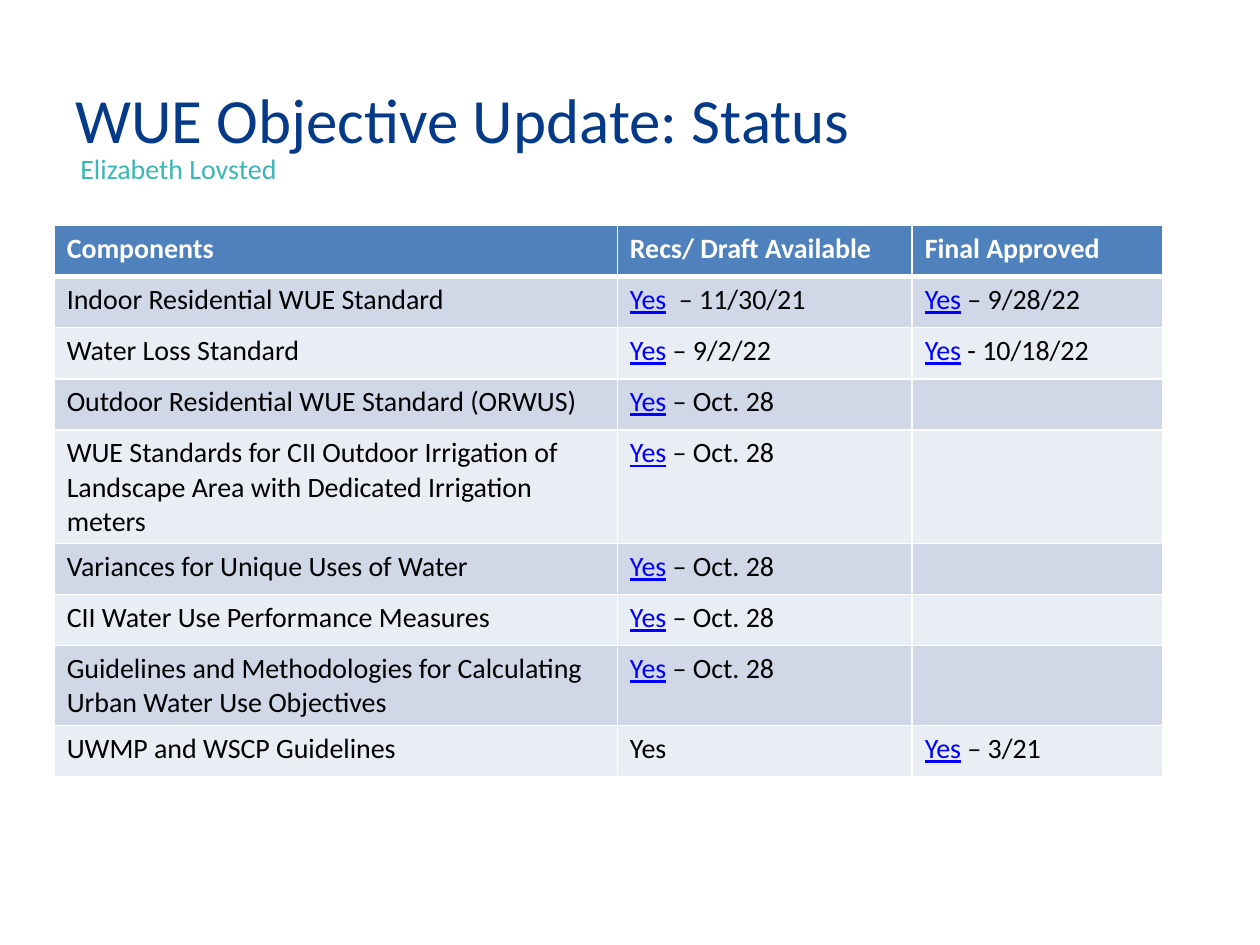
from dataclasses import dataclass

from lxml.etree import SubElement
from pptx import Presentation
from pptx.dml.color import RGBColor
from pptx.enum.text import MSO_VERTICAL_ANCHOR as Anchor
from pptx.oxml.ns import qn
from pptx.util import Inches, Pt


@dataclass(frozen=True)
class Theme:
    font: str = "Calibri"
    title_size: int = 36
    body_size: int = 16
    title: str = "053A88"
    presenter: str = "3BB6B3"
    text: str = "000000"
    link: str = "0000FF"
    white: str = "FFFFFF"
    header_fill: str = "4F81BD"
    band_fills: tuple = ("D0D8E8", "E9EDF4")
    border: int = 1
    header_border: int = 3


THEME = Theme()
COLUMN_WIDTHS = (4.47, 2.34, 1.99)
HEADERS = ("Components", "Recs/ Draft Available", "Final Approved")
DRAFT = ("Yes", " – Oct. 28")
STATUS_ROWS = (
    ("Indoor Residential WUE Standard", ("Yes", "  – 11/30/21"), ("Yes", " – 9/28/22")),
    ("Water Loss Standard", ("Yes", " – 9/2/22"), ("Yes", " - 10/18/22")),
    ("Outdoor Residential WUE Standard (ORWUS)", DRAFT, ""),
    ("WUE Standards for CII Outdoor Irrigation of Landscape Area "
     "with Dedicated Irrigation meters", DRAFT, ""),
    ("Variances for Unique Uses of Water", DRAFT, ""),
    ("CII Water Use Performance Measures", DRAFT, ""),
    ("Guidelines and Methodologies for Calculating Urban Water Use Objectives", DRAFT, ""),
    ("UWMP and WSCP Guidelines", "Yes", ("Yes", " – 3/21")),
)


def add_text(paragraph, text, size=THEME.body_size, color=THEME.text,
             bold=False, underline=False):
    run = paragraph.add_run()
    run.text = text
    font = run.font
    font.name = THEME.font
    font.size = Pt(size)
    font.bold = bold
    font.underline = underline
    font.color.rgb = RGBColor.from_string(color)


def add_text_box(slide, left, top, width, height, text, anchor=Anchor.TOP,
                 line_spacing=None, **text_format):
    shape = slide.shapes.add_textbox(Inches(left), Inches(top), Inches(width), Inches(height))
    frame = shape.text_frame
    frame.word_wrap = True
    frame.vertical_anchor = anchor
    paragraph = frame.paragraphs[0]
    paragraph.line_spacing = line_spacing
    add_text(paragraph, text, **text_format)


def set_borders(cell, **widths):
    properties = cell._tc.get_or_add_tcPr()
    for side in "LRTB":
        width = widths.get(side, THEME.border)
        line = SubElement(properties, qn(f"a:ln{side}"), w=str(Pt(width)))
        fill = SubElement(line, qn("a:solidFill"))
        SubElement(fill, qn("a:srgbClr"), val=THEME.white)


def fill_cell(cell, content, fill, borders, **text_format):
    set_borders(cell, **borders)
    cell.fill.solid()
    cell.fill.fore_color.rgb = RGBColor.from_string(fill)
    paragraph = cell.text_frame.paragraphs[0]
    if isinstance(content, tuple):
        answer, date = content
        add_text(paragraph, answer, color=THEME.link, underline=True)
        add_text(paragraph, date)
    elif content:
        add_text(paragraph, content, **text_format)
    else:
        paragraph.font.size = Pt(THEME.body_size)


def add_status_table(slide, left, top, height):
    frame = slide.shapes.add_table(
        len(STATUS_ROWS) + 1, len(COLUMN_WIDTHS),
        Inches(left), Inches(top), Inches(sum(COLUMN_WIDTHS)), Inches(height))
    table = frame.table
    for column, width in zip(table.columns, COLUMN_WIDTHS):
        column.width = Inches(width)
    for column, header in enumerate(HEADERS):
        fill_cell(table.cell(0, column), header, THEME.header_fill,
                  {"B": THEME.header_border}, color=THEME.white, bold=True)
    for row, contents in enumerate(STATUS_ROWS, start=1):
        fill = THEME.band_fills[(row - 1) % 2]
        borders = {"T": THEME.header_border} if row == 1 else {}
        for column, content in enumerate(contents):
            fill_cell(table.cell(row, column), content, fill, borders)


def main():
    presentation = Presentation()
    presentation.slide_width = Inches(10)
    presentation.slide_height = Inches(7.5)
    slide = presentation.slides.add_slide(presentation.slide_layouts[6])
    add_text_box(slide, 0.54, 1.15, 9, 0.35, "Elizabeth Lovsted", color=THEME.presenter)
    add_text_box(slide, 0.5, 0.23, 9, 1.06, "WUE Objective Update: Status",
                 anchor=Anchor.BOTTOM, line_spacing=Pt(THEME.title_size),
                 size=THEME.title_size, color=THEME.title)
    add_status_table(slide, 0.43, 1.79, 3.65)
    presentation.save("out.pptx")


if __name__ == "__main__":
    main()
